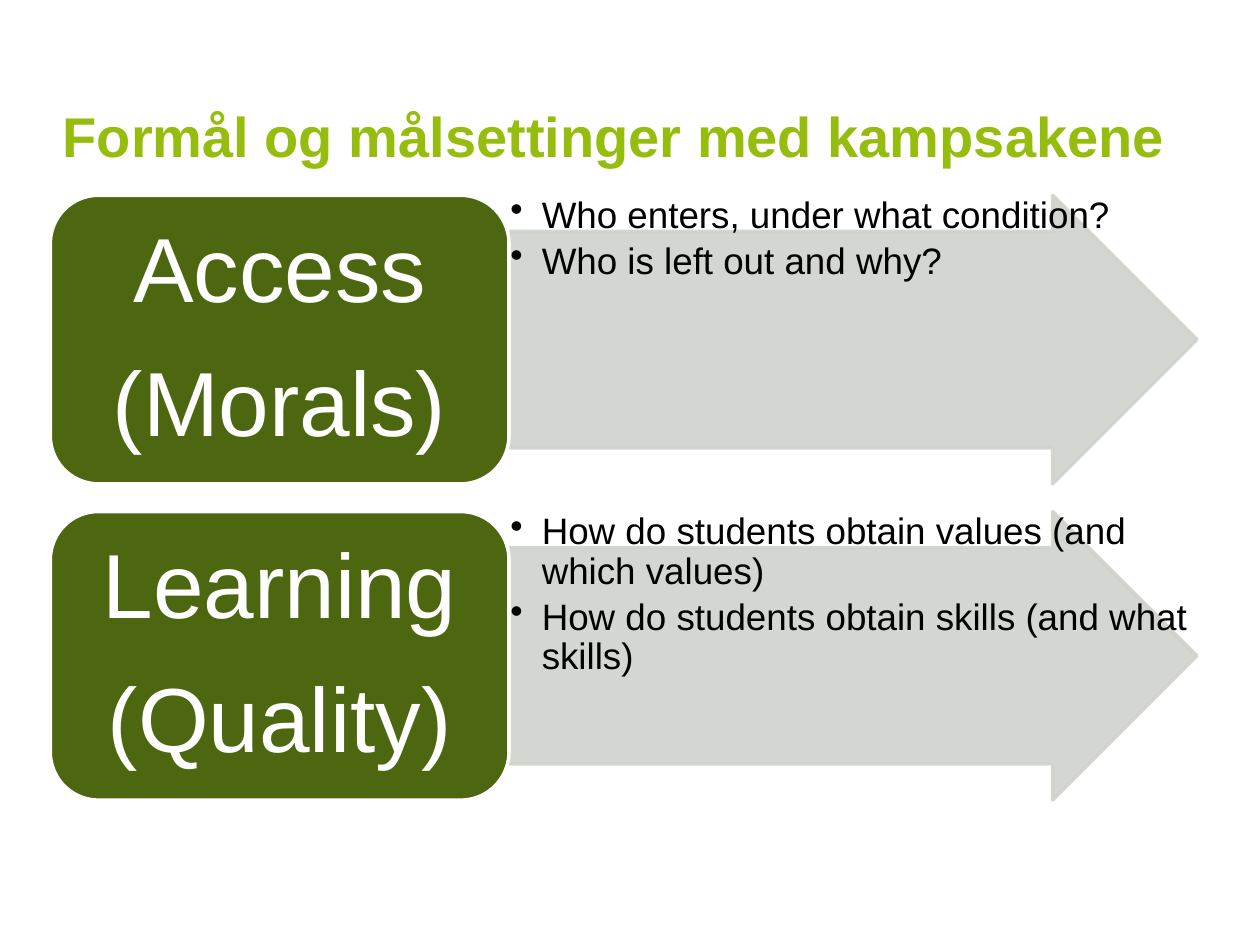
"""Build a slide pairing two goals with the questions each one raises."""
from lxml import etree
from pptx import Presentation, util as u
from pptx.dml.color import RGBColor
from pptx.enum import shapes, text
from pptx.oxml.ns import qn

LIME = RGBColor(0x96, 0xBD, 0x0D)
OLIVE = RGBColor(0x4D, 0x67, 0x11)
GREY = RGBColor(0xD0, 0xD3, 0xCC)
WHITE = RGBColor(0xFF, 0xFF, 0xFF)
BLACK = RGBColor(0x00, 0x00, 0x00)

LEFT, WIDTH = 0.4, 9.1
TOP, ROW_HEIGHT, ROW_PITCH = 1.55, 2.29, 2.51
GOAL_WIDTH = WIDTH * 0.4
ARROW_LEFT, ARROW_WIDTH = LEFT + GOAL_WIDTH, WIDTH * 0.6

GOALS = [
    ("Access\n(Morals)",
     "Who enters, under what condition?\nWho is left out and why?"),
    ("Learning\n(Quality)",
     "How do students obtain values (and which values)\n"
     "How do students obtain skills (and what skills)"),
]


def add_block(kind, left, top, width, color, line_color):
    shape = slide.shapes.add_shape(
        kind, u.Inches(left), u.Inches(top), u.Inches(width), u.Inches(ROW_HEIGHT))
    shape.shadow.inherit = False
    shape.fill.solid()
    shape.fill.fore_color.rgb = color
    shape.line.color.rgb = line_color
    shape.line.width = u.Pt(2)
    return shape


def write(shape, content, size, color, anchor, insets, space_after=0, bold=False):
    frame = shape.text_frame
    frame.word_wrap = True
    frame.vertical_anchor = anchor
    frame.margin_left = frame.margin_right = u.Inches(insets[0])
    frame.margin_top = frame.margin_bottom = u.Inches(insets[1])
    frame.text = content
    for paragraph in frame.paragraphs:
        paragraph.space_after = u.Pt(space_after)
        for run in paragraph.runs:
            run.font.name = "Arial"
            run.font.size = u.Pt(size)
            run.font.bold = bold
            run.font.color.rgb = color
    return frame.paragraphs


presentation = Presentation()
presentation.slide_width, presentation.slide_height = u.Inches(10), u.Inches(7.5)
slide = presentation.slides.add_slide(presentation.slide_layouts[6])

title = slide.shapes.add_textbox(
    u.Inches(LEFT), u.Inches(0.3), u.Inches(WIDTH), u.Inches(1.09))
write(title, "Formål og målsettinger med kampsakene", 32, LIME,
      text.MSO_ANCHOR.BOTTOM, (0.1, 0.05), bold=True)

for row, (goal, questions) in enumerate(GOALS):
    top = TOP + row * ROW_PITCH

    arrow = add_block(shapes.MSO_SHAPE.RIGHT_ARROW, ARROW_LEFT, top, ARROW_WIDTH, GREY, GREY)
    arrow.adjustments[0], arrow.adjustments[1] = 0.75, 0.5
    for color in arrow._element.spPr.iter(qn("a:srgbClr")):
        etree.SubElement(color, qn("a:alpha"), val="90000")

    question_box = slide.shapes.add_textbox(
        u.Inches(ARROW_LEFT), u.Inches(top), u.Inches(ARROW_WIDTH), u.Inches(ROW_HEIGHT))
    for paragraph in write(question_box, questions, 21, BLACK,
                           text.MSO_ANCHOR.TOP, (0.01, 0.01), space_after=3.5):
        paragraph.line_spacing = 0.9
        properties = paragraph._p.get_or_add_pPr()
        properties.set("marL", str(u.Inches(0.25)))
        properties.set("indent", str(u.Inches(-0.25)))
        etree.SubElement(properties, qn("a:buChar"), char="•")

    goal_box = add_block(
        shapes.MSO_SHAPE.ROUNDED_RECTANGLE, LEFT, top, GOAL_WIDTH, OLIVE, WHITE)
    for paragraph in write(goal_box, goal, 52, WHITE,
                           text.MSO_ANCHOR.MIDDLE, (0.11, 0), space_after=20.5):
        paragraph.line_spacing = 0.9
        paragraph.alignment = text.PP_ALIGN.CENTER

presentation.save("out.pptx")
